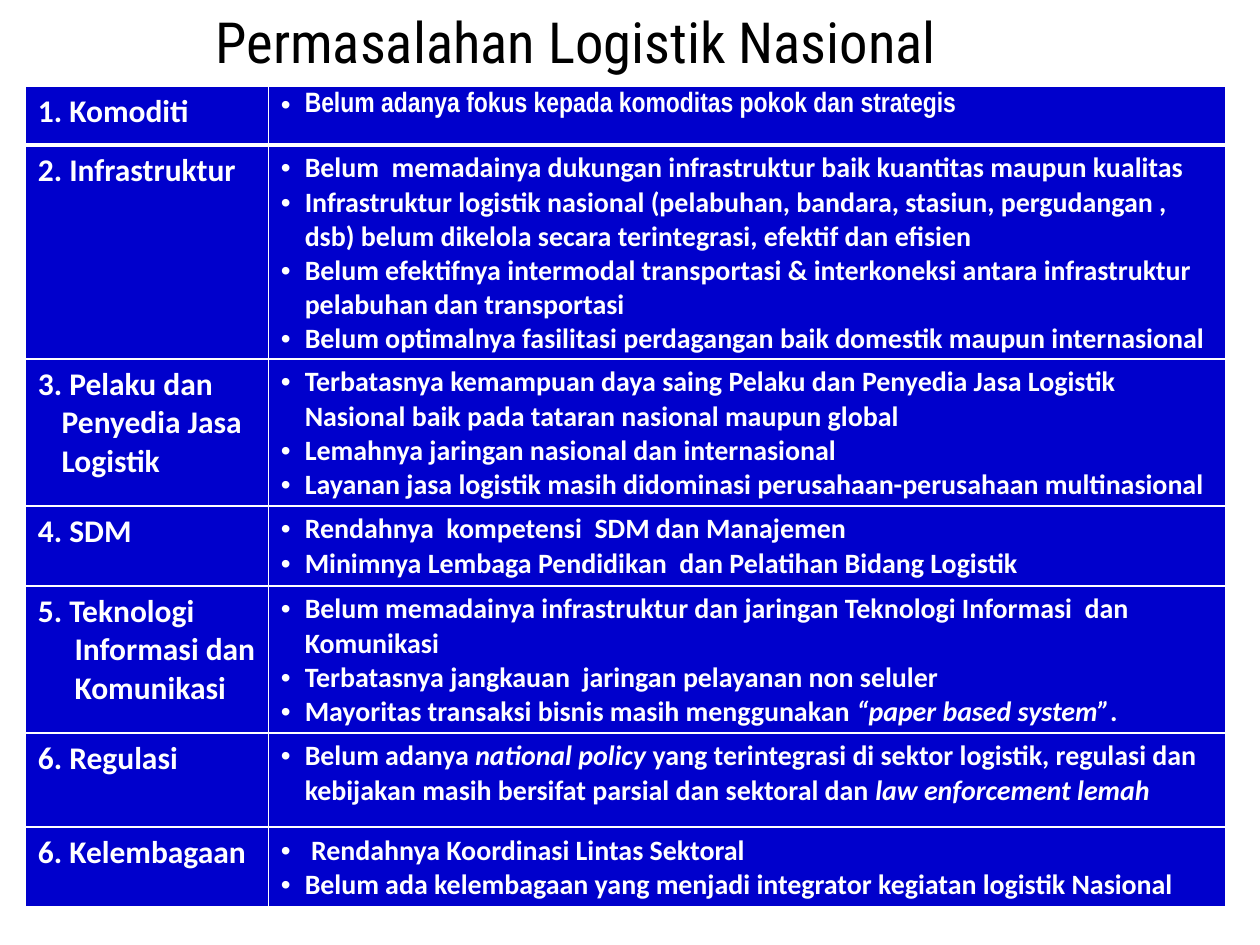
import dataclasses

import lxml.etree
import pptx
import pptx.dml.color
import pptx.enum.text
import pptx.oxml.ns
import pptx.util

Cm = pptx.util.Cm
Pt = pptx.util.Pt


@dataclasses.dataclass(frozen=True)
class Theme:
    fill: str = "0000CC"
    light: str = "FFFFFF"
    dark: str = "000000"
    title_font: str = "Roboto Condensed"
    body_font: str = "Calibri"
    narrow_font: str = "Arial Narrow"
    title_size: float = 32.4
    topic_size: float = 18
    issue_size: float = 16
    thin_line: float = 1
    thick_line: float = 3


@dataclasses.dataclass(frozen=True)
class Problem:
    """One table row; asterisks in an issue enclose italic words."""
    topic: str
    height: float
    issues: tuple
    indent: float = 0.95
    level: int = 0
    issue_font: str = Theme.body_font


THEME = Theme()
ISSUE_INDENT = 0.48
COLUMN_SHARES = (1.93, 7.6)
PROBLEMS = (
    Problem("1. Komoditi", 1.19, (
        "Belum adanya fokus kepada komoditas pokok dan strategis",
    ), issue_font=THEME.narrow_font),
    Problem("2. Infrastruktur", 3.56, (
        "Belum  memadainya dukungan infrastruktur baik kuantitas maupun kualitas",
        "Infrastruktur logistik nasional (pelabuhan, bandara, stasiun, pergudangan , "
        "dsb) belum dikelola secara terintegrasi, efektif dan efisien",
        "Belum efektifnya intermodal transportasi & interkoneksi antara infrastruktur "
        "pelabuhan dan transportasi",
        "Belum optimalnya fasilitasi perdagangan baik domestik maupun internasional",
    )),
    Problem("3. Pelaku dan Penyedia Jasa Logistik", 2.46, (
        "Terbatasnya kemampuan daya saing Pelaku dan Penyedia Jasa Logistik "
        "Nasional baik pada tataran nasional maupun global",
        "Lemahnya jaringan nasional dan internasional",
        "Layanan jasa logistik masih didominasi perusahaan-perusahaan multinasional",
    ), indent=0.48),
    Problem("4. SDM", 1.35, (
        "Rendahnya  kompetensi  SDM dan Manajemen",
        "Minimnya Lembaga Pendidikan  dan Pelatihan Bidang Logistik",
    )),
    Problem("5. Teknologi  Informasi dan Komunikasi", 2.46, (
        "Belum memadainya infrastruktur dan jaringan Teknologi Informasi  dan Komunikasi",
        "Terbatasnya jangkauan  jaringan pelayanan non seluler",
        "Mayoritas transaksi bisnis masih menggunakan *“paper based system”*.",
    ), indent=0.74, level=1),
    Problem("6. Regulasi", 1.9, (
        "Belum adanya *national policy* yang terintegrasi di sektor logistik, regulasi dan "
        "kebijakan masih bersifat parsial dan sektoral dan *law enforcement lemah*",
    ), level=1),
    Problem("6. Kelembagaan", 1.55, (
        " Rendahnya Koordinasi Lintas Sektoral",
        "Belum ada kelembagaan yang menjadi integrator kegiatan logistik Nasional",
    ), level=1),
)


def set_attributes(target, values):
    for name, value in values.items():
        setattr(target, name, value)


def add_element(parent, tag, **attributes):
    element = lxml.etree.SubElement(parent, pptx.oxml.ns.qn(tag))
    for name, value in attributes.items():
        element.set(name, str(value))
    return element


def write_runs(paragraph, text, color, **font_format):
    """Write text as runs, with the parts between asterisks in italics."""
    for index, part in enumerate(text.split("*")):
        if part:
            run = paragraph.add_run()
            run.text = part
            set_attributes(run.font, {**font_format, "italic": index % 2 == 1})
            run.font.color.rgb = pptx.dml.color.RGBColor.from_string(color)


def hang(paragraph, indent):
    properties = paragraph._p.get_or_add_pPr()
    properties.set("marL", str(Cm(indent)))
    properties.set("indent", str(-Cm(indent)))
    return properties


def style_cell(cell, top, bottom):
    """Fill the cell and draw its borders, with the given top and bottom widths."""
    properties = cell._tc.get_or_add_tcPr()
    widths = {"a:lnL": THEME.thin_line, "a:lnR": THEME.thin_line,
              "a:lnT": top, "a:lnB": bottom}
    for tag, width in widths.items():
        line = add_element(properties, tag, w=Pt(width))
        add_element(add_element(line, "a:solidFill"), "a:srgbClr", val=THEME.light)
    cell.fill.solid()
    cell.fill.fore_color.rgb = pptx.dml.color.RGBColor.from_string(THEME.fill)


def write_topic(cell, problem):
    paragraph = cell.text_frame.paragraphs[0]
    hang(paragraph, problem.indent)
    write_runs(paragraph, problem.topic, THEME.light, name=THEME.body_font,
               size=Pt(THEME.topic_size), bold=True)


def write_issues(cell, problem):
    frame = cell.text_frame
    for index, issue in enumerate(problem.issues):
        paragraph = frame.add_paragraph() if index else frame.paragraphs[0]
        paragraph.level = problem.level
        properties = hang(paragraph, ISSUE_INDENT)
        add_element(add_element(properties, "a:buClr"), "a:srgbClr", val=THEME.light)
        add_element(properties, "a:buFont", typeface="Arial")
        add_element(properties, "a:buChar", char="•")
        write_runs(paragraph, issue, THEME.light, name=problem.issue_font,
                   size=Pt(THEME.issue_size), bold=True)


def add_title(slide, left, top, width, height):
    shape = slide.shapes.add_textbox(left, top, width, height)
    set_attributes(shape.text_frame, {
        "word_wrap": True,
        "vertical_anchor": pptx.enum.text.MSO_ANCHOR.MIDDLE,
        "margin_left": 0, "margin_right": 0, "margin_top": 0, "margin_bottom": 0,
    })
    paragraph = shape.text_frame.paragraphs[0]
    paragraph.alignment = pptx.enum.text.PP_ALIGN.CENTER
    write_runs(paragraph, "Permasalahan Logistik Nasional", THEME.dark,
               name=THEME.title_font, size=Pt(THEME.title_size))


def add_problem_table(slide, left, top, width, height):
    shape = slide.shapes.add_table(len(PROBLEMS), len(COLUMN_SHARES),
                                   left, top, width, height)
    table = shape.table
    set_attributes(table, {"first_row": False, "horz_banding": False})
    for column, share in zip(table.columns, COLUMN_SHARES):
        column.width = int(width * share / sum(COLUMN_SHARES))
    for index, (row, problem) in enumerate(zip(table.rows, PROBLEMS)):
        row.height = Cm(problem.height)
        above = THEME.thick_line if index == 1 else THEME.thin_line
        below = THEME.thick_line if index == 0 else THEME.thin_line
        for cell in row.cells:
            style_cell(cell, above, below)
        write_topic(row.cells[0], problem)
        write_issues(row.cells[1], problem)
    shape.height = height


def main():
    presentation = pptx.Presentation()
    set_attributes(presentation, {"slide_width": Cm(25.4), "slide_height": Cm(19.05)})
    slide = presentation.slides.add_slide(presentation.slide_layouts[6])
    add_title(slide, Cm(1.55), Cm(0.33), Cm(20.12), Cm(1))
    add_problem_table(slide, Cm(0.51), Cm(1.73), Cm(24.2), Cm(16.56))
    presentation.save("out.pptx")


if __name__ == "__main__":
    main()
